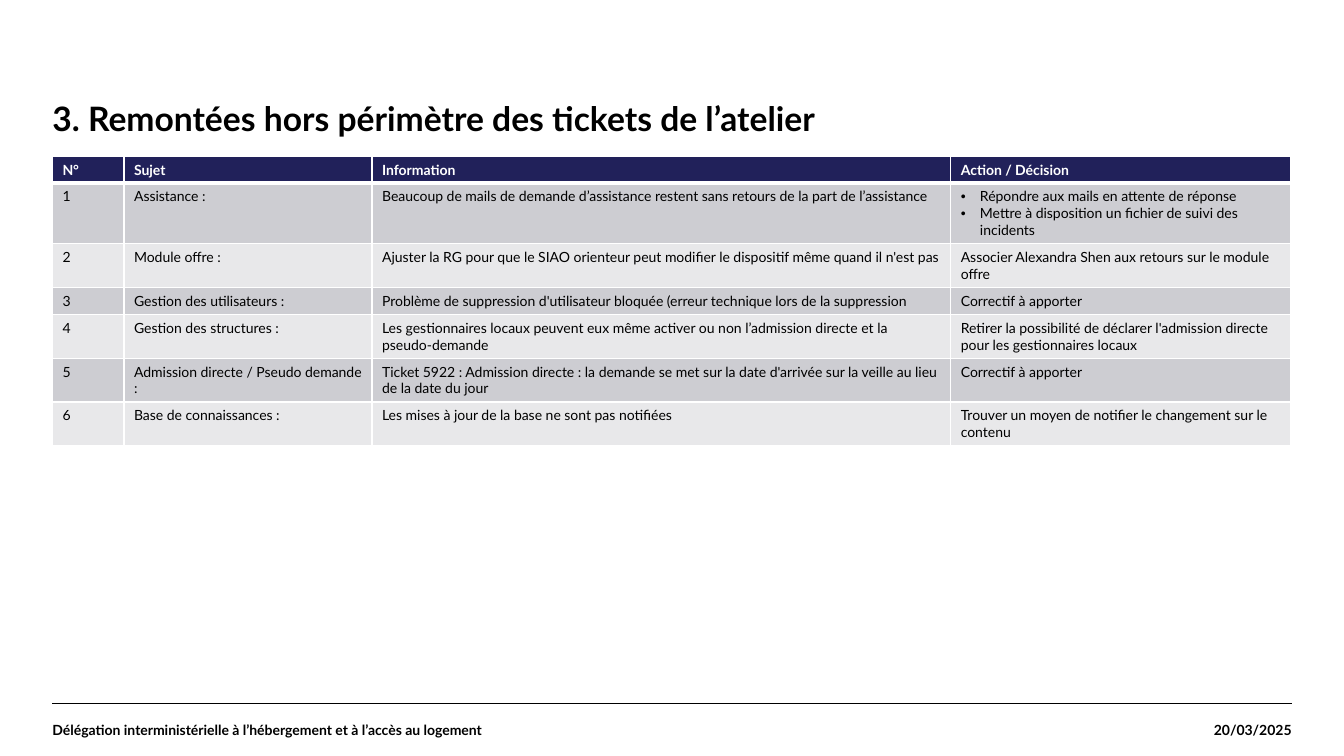
import pptx
import pptx.dml.color
import pptx.enum.shapes
import pptx.enum.text
import pptx.oxml
import pptx.oxml.ns
import pptx.util
from lxml import etree

COLORS = {"black": "000000", "white": "FFFFFF", "navy": "21215A",
          "dark_band": "CDCDD2", "light_band": "E8E8EA"}
ALIGN = pptx.enum.text.PP_ALIGN
ANCHOR = pptx.enum.text.MSO_ANCHOR

HEADERS = ["N°", "Sujet", "Information", "Action / Décision"]
TOPICS = [
    ("Assistance :",
     "Beaucoup de mails de demande d’assistance restent sans retours de la part de l’assistance",
     ["Répondre aux mails en attente de réponse",
      "Mettre à disposition un fichier de suivi des incidents"]),
    ("Module offre :",
     "Ajuster la RG pour que le SIAO orienteur peut modifier le dispositif même quand il n'est pas",
     "Associer Alexandra Shen aux retours sur le module offre"),
    ("Gestion des utilisateurs :",
     "Problème de suppression d'utilisateur bloquée (erreur technique lors de la suppression",
     "Correctif à apporter"),
    ("Gestion des structures :",
     "Les gestionnaires locaux peuvent eux même activer ou non l’admission directe et la pseudo-demande",
     "Retirer la possibilité de déclarer l'admission directe pour les gestionnaires locaux"),
    ("Admission directe / Pseudo demande :",
     "Ticket 5922 : Admission directe : la demande se met sur la date d'arrivée sur la veille"
     " au lieu de la date du jour",
     "Correctif à apporter"),
    ("Base de connaissances :",
     "Les mises à jour de la base ne sont pas notifiées",
     "Trouver un moyen de notifier le changement sur le contenu"),
]


def px(value):
    """Convert px, at 100 to the inch, into EMU."""
    return pptx.util.Emu(value * 9144)


def rgb(name):
    return pptx.dml.color.RGBColor.from_string(COLORS[name])


def write_text(frame, text, size=10, color="black", bold=False,
               align=ALIGN.LEFT, line_spacing=None):
    """Write a string, or a list of strings as bullets."""
    bulleted = isinstance(text, list)
    for index, line in enumerate(text if bulleted else [text]):
        paragraph = frame.paragraphs[0] if index == 0 else frame.add_paragraph()
        paragraph.alignment = align
        if line_spacing:
            paragraph.line_spacing = line_spacing
        if bulleted:
            properties = paragraph._p.get_or_add_pPr()
            properties.set("marL", str(px(19)))
            properties.set("indent", str(px(-19)))
            for tag, key, value in (("a:buFont", "typeface", "Arial"),
                                    ("a:buChar", "char", "•")):
                etree.SubElement(properties, pptx.oxml.ns.qn(tag)).set(key, value)
        run = paragraph.add_run()
        run.text = line
        run.font.name = "Lato"
        run.font.size = pptx.util.Pt(size)
        run.font.bold = bold
        run.font.color.rgb = rgb(color)


class SlideBuilder:
    def __init__(self, slide):
        self.slide = slide

    def text_box(self, left, top, width, height, text, anchor=ANCHOR.TOP, **style):
        shape = self.slide.shapes.add_textbox(px(left), px(top), px(width), px(height))
        frame = shape.text_frame
        frame.word_wrap = True
        frame.vertical_anchor = anchor
        frame.margin_left = frame.margin_right = 0
        frame.margin_top = frame.margin_bottom = 0
        write_text(frame, text, **style)

    def rule(self, left, right, y, width, color):
        line = self.slide.shapes.add_connector(
            pptx.enum.shapes.MSO_CONNECTOR.STRAIGHT, px(left), px(y), px(right), px(y))
        line.line.width = pptx.util.Pt(width)
        line.line.color.rgb = rgb(color)
        etree.SubElement(line._element.spPr, pptx.oxml.ns.qn("a:effectLst"))

    def cell(self, cell, text, fill, borders, **style):
        properties = cell._tc.get_or_add_tcPr()
        for side, width in borders.items():
            border = etree.SubElement(properties, pptx.oxml.ns.qn(f"a:ln{side}"))
            border.set("w", str(pptx.util.Pt(width)))
            solid = etree.SubElement(border, pptx.oxml.ns.qn("a:solidFill"))
            color = etree.SubElement(solid, pptx.oxml.ns.qn("a:srgbClr"))
            color.set("val", COLORS["white"])
        cell.fill.solid()
        cell.fill.fore_color.rgb = rgb(fill)
        write_text(cell.text_frame, text, **style)

    def table(self, left, top, column_widths, row_height, rows):
        table = self.slide.shapes.add_table(
            len(rows), len(column_widths), px(left), px(top),
            px(sum(column_widths)), px(row_height * len(rows))).table
        for column, width in zip(table.columns, column_widths):
            column.width = px(width)
        for row_index, values in enumerate(rows):
            table.rows[row_index].height = px(row_height)
            header = row_index == 0
            band = "dark_band" if row_index % 2 else "light_band"
            # A thick line separates the header from the body
            borders = {"L": 1, "R": 1, "T": 3 if row_index == 1 else 1,
                       "B": 3 if header else 1}
            for column_index, text in enumerate(values):
                self.cell(table.cell(row_index, column_index), text,
                          "navy" if header else band, borders,
                          color="white" if header else "black", bold=header)


def main():
    presentation = pptx.Presentation()
    presentation.slide_width, presentation.slide_height = px(1333), px(750)
    builder = SlideBuilder(presentation.slides.add_slide(presentation.slide_layouts[6]))

    # Footer rule and title
    builder.rule(52, 1281, 698, 0.8, "black")
    builder.text_box(52, 102, 1228, 105, "3. Remontées hors périmètre des tickets de l’atelier",
                     size=24, bold=True, line_spacing=0.9)

    # Footer
    builder.text_box(1110, 698, 171, 52, "20/03/2025",
                     anchor=ANCHOR.MIDDLE, bold=True, align=ALIGN.RIGHT)
    builder.text_box(52, 698, 861, 52,
                     "Délégation interministérielle à l’hébergement et à l’accès au logement",
                     anchor=ANCHOR.MIDDLE, bold=True)

    # Numbered topics
    numbered = [(str(number), *topic) for number, topic in enumerate(TOPICS, 1)]
    builder.table(52, 155, [71, 246, 574, 337], 26, [HEADERS, *numbered])

    presentation.save("out.pptx")


if __name__ == "__main__":
    main()
